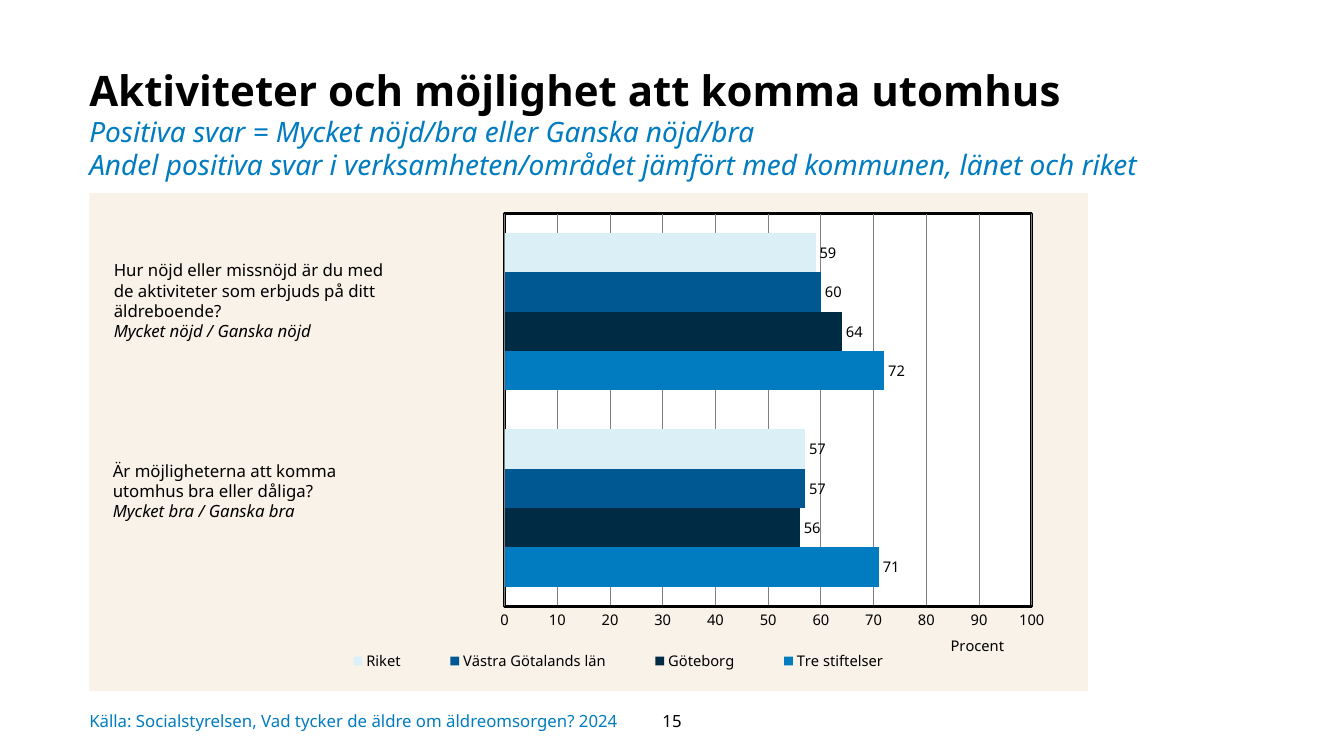
from lxml import etree
from pptx import Presentation
from pptx.chart.data import CategoryChartData
from pptx.dml.color import RGBColor
from pptx.enum.chart import XL_CHART_TYPE, XL_LABEL_POSITION, XL_LEGEND_POSITION, XL_TICK_LABEL_POSITION, XL_TICK_MARK
from pptx.enum.text import MSO_ANCHOR, MSO_AUTO_SIZE, PP_ALIGN
from pptx.oxml import parse_xml
from pptx.oxml.ns import nsdecls, qn
from pptx.util import Emu, Pt

PX = 9525
FONT = "Noto Sans"
BLACK = RGBColor(0x00, 0x00, 0x00)
WHITE = RGBColor(0xFF, 0xFF, 0xFF)
GREY = RGBColor(0x80, 0x80, 0x80)
SAND = RGBColor(0xF8, 0xF2, 0xE8)
BLUE = RGBColor(0x01, 0x7C, 0xC1)
NAVY = RGBColor(0x00, 0x2B, 0x45)
MID_BLUE = RGBColor(0x00, 0x58, 0x92)
PALE_BLUE = RGBColor(0xDB, 0xF0, 0xF6)

BAR_CLUSTERED = XL_CHART_TYPE.BAR_CLUSTERED
OUTSIDE_END = XL_LABEL_POSITION.OUTSIDE_END
LEGEND_BOTTOM = XL_LEGEND_POSITION.BOTTOM
NO_LABELS = XL_TICK_LABEL_POSITION.NONE
NO_TICKS = XL_TICK_MARK.NONE
TOP, MIDDLE = MSO_ANCHOR.TOP, MSO_ANCHOR.MIDDLE
LEFT, CENTER = PP_ALIGN.LEFT, PP_ALIGN.CENTER
SHRINK = MSO_AUTO_SIZE.TEXT_TO_FIT_SHAPE

# Series from the bottom bar up, values for the lower and the upper question
SERIES = [
    ("Tre stiftelser", (71, 72), BLUE),
    ("Göteborg", (56, 64), NAVY),
    ("Västra Götalands län", (57, 60), MID_BLUE),
    ("Riket", (57, 59), PALE_BLUE),
]


def px(*lengths):
    return [Emu(length * PX) for length in lengths]


def set_font(font, size, color=BLACK, bold=False, italic=False):
    font.name = FONT
    font.size = Pt(size)
    font.color.rgb = color
    font.bold = bold
    font.italic = italic


def add_span(para, text, **font_format):
    """Add text to a paragraph; a newline becomes a line break."""
    for index, line in enumerate(text.split("\n")):
        if index:
            para.add_line_break()
        if line:
            span = para.add_run()
            span.text = line
            set_font(span.font, **font_format)


def add_text(page, area, text, anchor=TOP, align=LEFT, margins=None, **font_format):
    box = page.shapes.add_textbox(*px(*area))
    frame = box.text_frame
    frame.word_wrap = True
    frame.vertical_anchor = anchor
    if margins is not None:
        frame.margin_left = frame.margin_right = margins
        frame.margin_top = frame.margin_bottom = margins
    para = frame.paragraphs[0]
    para.alignment = align
    add_span(para, text, **font_format)
    return frame


def add_heading(page, area):
    title = page.shapes.title
    title.left, title.top, title.width, title.height = px(*area)
    frame = title.text_frame
    frame.margin_left = frame.margin_top = 0
    frame.word_wrap = True
    frame.vertical_anchor = TOP
    frame.auto_size = SHRINK
    para = frame.paragraphs[0]
    para.alignment = LEFT
    para.line_spacing = 1.1
    add_span(para, "Aktiviteter och möjlighet att komma utomhus", size=30, bold=True)
    add_span(para, " \n", size=16, color=NAVY, italic=True)
    add_span(para, "Positiva svar = Mycket nöjd/bra eller Ganska nöjd/bra\n"
             "Andel positiva svar i verksamheten/området jämfört med kommunen, länet och riket",
             size=20, color=BLUE, italic=True)


def place(element, before, **layout):
    """Give a chart part a manual layout, ahead of the first of the named tags."""
    for old in element.findall(qn("c:layout")):
        element.remove(old)
    root = parse_xml(f"<c:layout {nsdecls('c')}><c:manualLayout/></c:layout>")
    for tag, value in layout.items():
        etree.SubElement(root[0], qn(f"c:{tag}")).set("val", str(value))
    follower = next(child for child in element if child.tag in [qn(tag) for tag in before])
    follower.addprevious(root)


def paint(element, before, fill, border=None):
    """Fill a chart part that has no public format object."""
    line = "<a:ln><a:noFill/></a:ln>"
    if border:
        line = f'<a:ln w="25400"><a:solidFill><a:srgbClr val="{border}"/></a:solidFill></a:ln>'
    part = parse_xml(
        f'<c:spPr {nsdecls("c", "a")}><a:solidFill><a:srgbClr val="{fill}"/></a:solidFill>{line}</c:spPr>')
    follower = element.find(qn(before)) if before else None
    if follower is None:
        element.append(part)
    else:
        follower.addprevious(part)


def add_answers(page, area):
    data = CategoryChartData()
    data.categories = ["1", "2"]
    for name, values, _ in SERIES:
        data.add_series(name, values)
    chart = page.shapes.add_chart(BAR_CLUSTERED, *px(*area), data).chart
    set_font(chart.font, 10.5)
    chart.has_title = False

    # Bars
    plot = chart.plots[0]
    plot.gap_width = 100
    plot.overlap = 0
    plot.vary_by_categories = False
    for series, (_, _, color) in zip(plot.series, SERIES):
        series.format.fill.solid()
        series.format.fill.fore_color.rgb = color
        labels = series.data_labels
        labels.show_value = True
        labels.position = OUTSIDE_END
        set_font(labels.font, 10.5)

    # Axes
    questions, percent = chart.category_axis, chart.value_axis
    questions.tick_label_position = NO_LABELS
    questions.visible = False
    percent.minimum_scale, percent.maximum_scale, percent.major_unit = 0, 100, 10
    percent.major_tick_mark = percent.minor_tick_mark = NO_TICKS
    percent.format.line.color.rgb = BLACK
    percent.format.line.width = Pt(2)
    percent.has_major_gridlines = True
    percent.major_gridlines.format.line.color.rgb = GREY
    percent.major_gridlines.format.line.width = Pt(0.75)
    set_font(percent.tick_labels.font, 10.5)
    caption = percent.axis_title
    add_span(caption.text_frame.paragraphs[0], "Procent", size=10.5)
    place(caption._element, ["c:overlay"], xMode="edge", yMode="edge", x=0.86, y=0.88)

    # Legend
    chart.has_legend = True
    legend = chart.legend
    legend.position = LEGEND_BOTTOM
    legend.include_in_layout = False
    set_font(legend.font, 10.5)
    place(legend._element, ["c:overlay"], xMode="edge", yMode="edge", x=0.22, y=0.91, w=0.62, h=0.06)

    # Plot and chart backgrounds
    plot_area = chart._chartSpace.chart.plotArea
    place(plot_area, ["c:barChart"], layoutTarget="inner", xMode="edge", yMode="edge",
          x=0.416, y=0.041, w=0.528, h=0.789)
    paint(plot_area, None, WHITE, border=BLACK)
    paint(chart._chartSpace, "c:txPr", SAND)


def add_question(page, area, question, answers):
    frame = add_text(page, area, question, size=12)
    add_span(frame.add_paragraph(), answers, size=12, italic=True)


def add_footer(page, area):
    left, top, width, height = area
    add_text(page, area, "Källa: Socialstyrelsen, Vad tycker de äldre om äldreomsorgen? 2024",
             anchor=MIDDLE, margins=0, size=12, color=BLUE)
    add_text(page, (left + 506, top, 98, height), "15", anchor=MIDDLE, align=CENTER, size=12)


def main():
    deck = Presentation()
    deck.slide_width, deck.slide_height = px(1280, 720)
    page = deck.slides.add_slide(deck.slide_layouts[5])
    add_heading(page, (85, 62, 1018, 122))
    add_answers(page, (85, 184, 951, 474))
    add_question(page, (99, 243, 288, 105),
                 "Hur nöjd eller missnöjd är du med de aktiviteter som erbjuds på ditt äldreboende?",
                 "Mycket nöjd / Ganska nöjd")
    add_question(page, (98, 434, 289, 84),
                 "Är möjligheterna att komma utomhus bra eller dåliga?",
                 "Mycket bra / Ganska bra")
    add_footer(page, (85, 667, 861, 38))
    deck.save("out.pptx")


if __name__ == "__main__":
    main()
